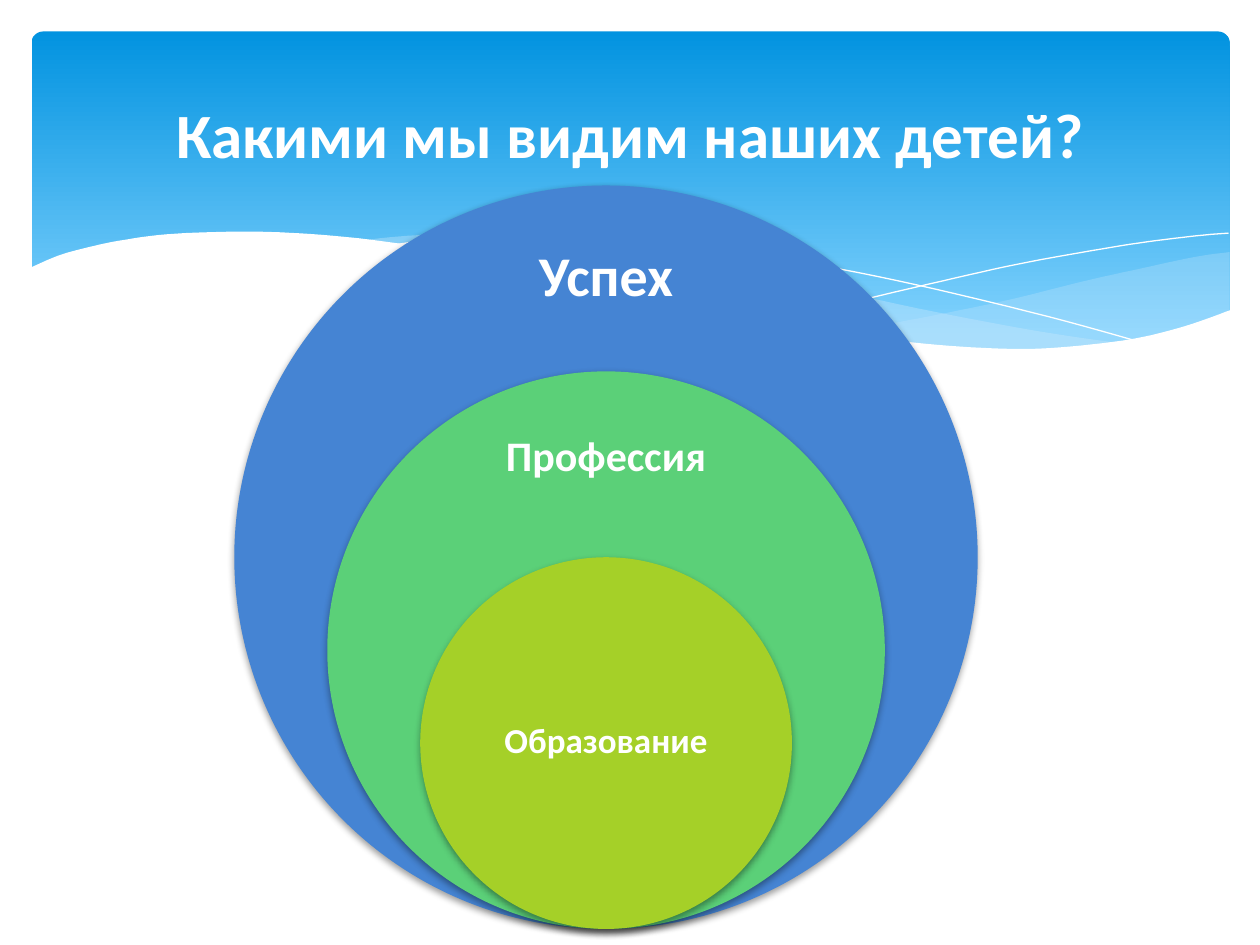
"""Build a slide with three nested circles under a wave banner."""
from lxml import etree
from pptx import Presentation, util as u
from pptx.dml.color import RGBColor
from pptx.enum import shapes, text
from pptx.oxml.ns import qn

COLORS = {
    "white": "FFFFFF", "banner_top": "0293E0", "banner_end": "83D3FE",
    "wave": "C6E7FC", "success": "4584D3", "career": "5BD078",
    "education": "A5D028", "shadow": "000000",
}
FONT = "Calibri"
STEPS = 6
UNITS = 1000


def rgb(name):
    return RGBColor.from_string(COLORS[name])


def smooth(points):
    ext = [points[0], *points, points[-1]]
    curve = [points[0]]
    for a, b, c, d in zip(ext, ext[1:], ext[2:], ext[3:]):
        for i in range(1, STEPS + 1):
            t = i / STEPS
            curve.append(tuple(
                0.5 * (2 * q + (m - p) * t + (2 * p - 5 * q + 4 * m - n) * t**2
                       + (3 * q - p - 3 * m + n) * t**3)
                for p, q, m, n in zip(a, b, c, d)))
    return curve


prs = Presentation()
prs.slide_width, prs.slide_height = u.Inches(10), u.Inches(7.5)
W, H = prs.slide_width, prs.slide_height
s = prs.slides.add_slide(prs.slide_layouts[5])
s.background.fill.solid()
s.background.fill.fore_color.rgb = rgb("white")

banner = s.shapes.add_shape(
    shapes.MSO_SHAPE.ROUNDED_RECTANGLE,
    int(W * 0.025), int(H / 30), int(W * 0.951), int(H * 0.36))
banner.adjustments[0] = 0.034
banner.shadow.inherit = False
banner.line.fill.background()
banner.fill.gradient()
banner.fill.gradient_angle = 270
for stop, (position, name) in zip(
        banner.fill.gradient_stops, [(0, "banner_top"), (0.9, "banner_end")]):
    stop.position = position
    stop.color.rgb = rgb(name)

right_wave = [
    [(9.76, 2), (9.48, 2.04), (9.06, 2.13), (8.61, 2.23), (8.05, 2.37),
     (7.53, 2.48), (7.06, 2.57), (6.61, 2.65)],
    [(6.61, 2.65), (7.05, 2.71), (7.57, 2.76), (8.03, 2.78), (8.54, 2.76),
     (8.97, 2.7), (9.35, 2.62), (9.76, 2.47)],
]
middle_wave = [
    [(8.93, 2.73), (8.37, 2.65), (7.75, 2.54), (7.06, 2.4), (6.29, 2.22),
     (5.69, 2.08), (5.14, 1.98), (4.65, 1.91), (4.2, 1.87), (3.8, 1.85),
     (3.44, 1.86), (3.13, 1.88), (2.86, 1.91)],
    [(2.86, 1.91), (3.42, 1.99), (4.04, 2.11), (4.49, 2.22), (5.3, 2.4),
     (6.01, 2.55), (6.65, 2.66), (7.22, 2.74), (7.73, 2.77), (8.18, 2.78),
     (8.57, 2.77), (8.93, 2.73)],
]
falling_line = [
    [(3.09, 1.95), (3.44, 1.9), (3.87, 1.87), (4.33, 1.87), (4.89, 1.9),
     (5.56, 1.97), (6.36, 2.08), (7.27, 2.26), (8.31, 2.51), (9.07, 2.72)],
]
rising_line = [
    [(6.13, 2.57), (6.72, 2.41), (7.48, 2.23), (8.06, 2.1), (8.66, 1.99),
     (9.1, 1.92), (9.51, 1.87), (9.75, 1.85)],
]
white_wave = [
    [(9.77, 2.46), (9.4, 2.59), (8.99, 2.69), (8.5, 2.75), (8.09, 2.77),
     (7.61, 2.75), (7.08, 2.7), (6.48, 2.62), (5.79, 2.5), (5.03, 2.33),
     (4.47, 2.2), (3.91, 2.07), (3.4, 1.97), (2.92, 1.9), (2.5, 1.86),
     (2.11, 1.84), (1.77, 1.84), (1.32, 1.86), (0.95, 1.91), (0.67, 1.97),
     (0.46, 2.03), (0.23, 2.13)],
    [(0.23, 3.29), (9.77, 3.29)],
]
for pieces, name, alpha in [
        (right_wave, "wave", 29), (middle_wave, "wave", 40),
        (falling_line, None, 100), (rising_line, None, 100),
        (white_wave, "white", 100)]:
    pts = [(x * UNITS, y * UNITS) for piece in pieces for x, y in smooth(piece)]
    builder = s.shapes.build_freeform(*pts[0], scale=u.Inches(1) / UNITS)
    builder.add_line_segments(pts[1:], close=name is not None)
    sp = builder.convert_to_shape()
    sp.shadow.inherit = False
    if name:
        sp.fill.solid()
        sp.fill.fore_color.rgb = rgb(name)
        sp.line.fill.background()
        if alpha < 100:
            color = sp._element.spPr.find(".//" + qn("a:srgbClr"))
            etree.SubElement(color, qn("a:alpha"), val=str(alpha * 1000))
    else:
        sp.fill.background()
        sp.line.color.rgb = rgb("white")
        sp.line.width = u.Pt(0)

title = s.shapes.title
s.shapes._spTree.append(title._element)
title.left, title.top = int(W * 0.05), int(H * 0.05)
title.width, title.height = int(W * 0.9), int(H * 0.183)
tf = title.text_frame
tf.text = "Какими мы видим наших детей?"
labels = [(tf, 36)]

center, bottom, largest = W * 0.481, H * 0.983, W * 0.59
for label, name, share, size, top, width, height, inset in [
        ("Успех", "success", 1, 32, 1.76, 2.06, 0.89, 0.25),
        ("Профессия", "career", 0.75, 24, 3.22, 2.06, 0.83, 0.19),
        ("Образование", "education", 0.5, 20, 5.15, 2.09, 1.48, 0.16)]:
    d = int(largest * share)
    sp = s.shapes.add_shape(
        shapes.MSO_SHAPE.OVAL, int(center - d / 2), int(bottom - d), d, d)
    sp.fill.solid()
    sp.fill.fore_color.rgb = rgb(name)
    sp.line.fill.background()
    sp.shadow.inherit = False
    shadow = etree.SubElement(
        sp._element.spPr.find(qn("a:effectLst")), qn("a:outerShdw"),
        blurRad=str(u.Pt(4)), dist=str(u.Pt(2)), dir="5400000", rotWithShape="0")
    color = etree.SubElement(shadow, qn("a:srgbClr"), val=COLORS["shadow"])
    etree.SubElement(color, qn("a:alpha"), val="38000")

    box = s.shapes.add_textbox(
        int(center - u.Inches(width) / 2), u.Inches(top),
        u.Inches(width), u.Inches(height))
    tf = box.text_frame
    tf.text = label
    tf.margin_left = tf.margin_right = u.Inches(inset)
    tf.margin_top = tf.margin_bottom = u.Inches(inset)
    tf.paragraphs[0].line_spacing = 0.9
    labels.append((tf, size))

for tf, size in labels:
    tf.word_wrap = True
    tf.auto_size = text.MSO_AUTO_SIZE.NONE
    tf.vertical_anchor = text.MSO_ANCHOR.MIDDLE
    p = tf.paragraphs[0]
    p.alignment = text.PP_ALIGN.CENTER
    p.font.name, p.font.size, p.font.bold = FONT, u.Pt(size), True
    p.font.color.rgb = rgb("white")

prs.save("out.pptx")
